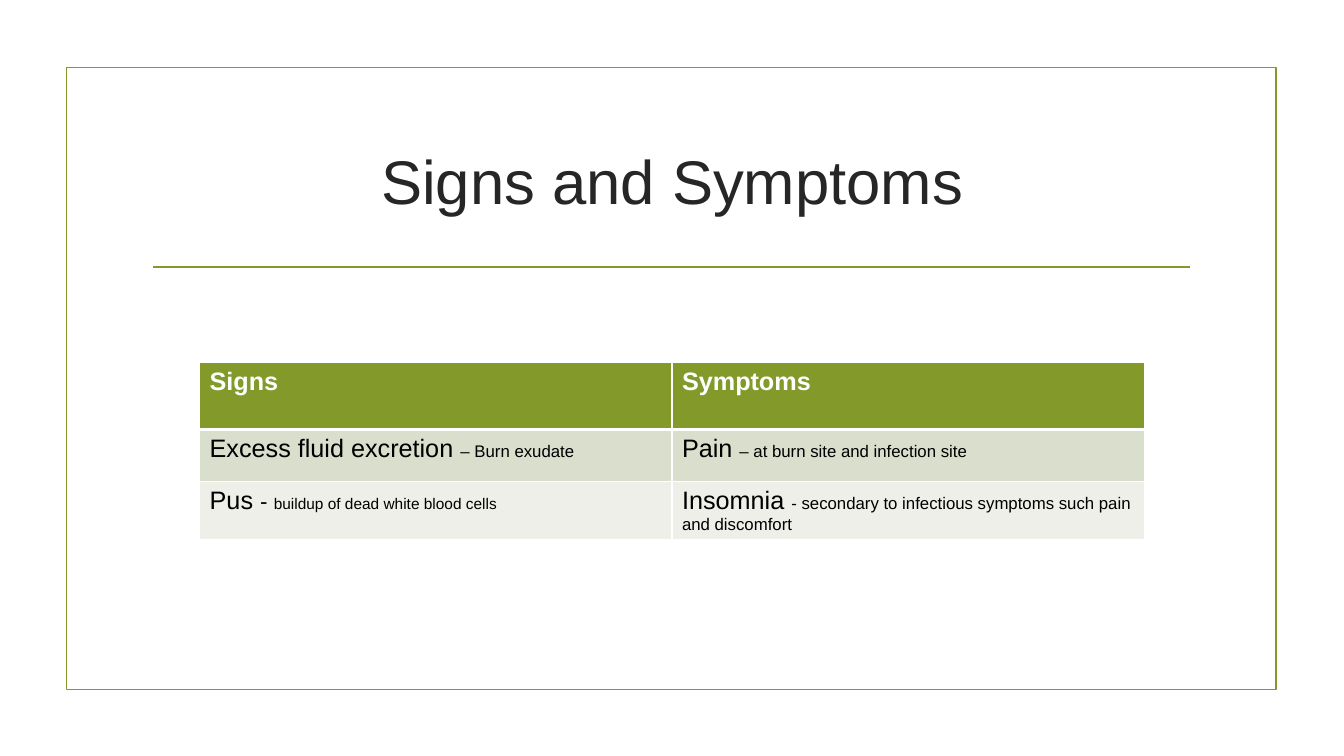
import pptx
import pptx.dml.color
import pptx.enum.shapes
import pptx.enum.text
import pptx.oxml
import pptx.oxml.ns
import pptx.util
from pptx.util import Inches

RGBColor = pptx.dml.color.RGBColor
GREEN = RGBColor(0x83, 0x99, 0x2A)
TITLE_GREY = RGBColor(0x26, 0x26, 0x26)
WHITE = RGBColor(0xFF, 0xFF, 0xFF)
BLACK = RGBColor(0, 0, 0)
ROW_FILLS = [GREEN, RGBColor(0xD9, 0xDE, 0xCD), RGBColor(0xED, 0xEF, 0xE8)]
ROW_HEIGHTS = [0.66, 0.52, 0.57]
FONT = "Arial"

# Each cell is a list of (text, size in points) runs.
ROWS = [
    [[("Signs", 18)], [("Symptoms", 18)]],
    [[("Excess fluid excretion ", 18), ("– Burn exudate", 12)],
     [("Pain ", 18), ("– at burn site and infection site", 12)]],
    [[("Pus ", 18), ("- ", 16), ("buildup of dead white blood cells", 11)],
     [("Insomnia ", 18),
      ("- secondary to infectious symptoms such pain and discomfort", 12)]],
]


def format_font(font, size, color, bold=False):
    font.name = FONT
    font.size = pptx.util.Pt(size)
    font.color.rgb = color
    font.bold = bold


def add_frame(slide, left, top, width, height):
    """Draw the outline and the rule that separates title from content."""
    frame = slide.shapes.add_shape(
        pptx.enum.shapes.MSO_SHAPE.RECTANGLE,
        Inches(left), Inches(top), Inches(width), Inches(height))
    frame.shadow.inherit = False
    frame.fill.background()

    rule_inset, rule_top = 0.86, top + 1.98
    rule = slide.shapes.add_connector(
        pptx.enum.shapes.MSO_CONNECTOR.STRAIGHT,
        Inches(left + rule_inset), Inches(rule_top),
        Inches(left + width - rule_inset), Inches(rule_top))
    rule._element.spPr.append(pptx.oxml.parse_xml(
        f'<a:effectLst {pptx.oxml.ns.nsdecls("a")}/>'))

    for shape in (frame, rule):
        shape.line.color.rgb = GREEN
        shape.line.width = pptx.util.Pt(1.25)


def place_title(slide, text, left, top, width, height):
    title = slide.shapes.title
    title.left, title.top = Inches(left), Inches(top)
    title.width, title.height = Inches(width), Inches(height)
    title.text_frame.text = text
    title.text_frame.vertical_anchor = pptx.enum.text.MSO_ANCHOR.MIDDLE
    paragraph = title.text_frame.paragraphs[0]
    paragraph.alignment = pptx.enum.text.PP_ALIGN.CENTER
    format_font(paragraph.runs[0].font, 44, TITLE_GREY)


def set_borders(cell, bottom_width, top_width):
    """Give a cell white borders, with widths in points; call before filling."""
    properties = cell._tc.get_or_add_tcPr()
    widths = {"lnL": 1, "lnR": 1, "lnT": top_width, "lnB": bottom_width}
    for side, width in widths.items():
        properties.append(pptx.oxml.parse_xml(
            f'<a:{side} {pptx.oxml.ns.nsdecls("a")} w="{pptx.util.Pt(width)}">'
            f'<a:solidFill><a:srgbClr val="{WHITE}"/></a:solidFill></a:{side}>'))


def fill_cell(cell, runs, row_index):
    is_header = row_index == 0
    set_borders(cell, bottom_width=3 if is_header else 1,
                top_width=3 if row_index == 1 else 1)
    cell.fill.solid()
    cell.fill.fore_color.rgb = ROW_FILLS[row_index]
    paragraph = cell.text_frame.paragraphs[0]
    for text, size in runs:
        run = paragraph.add_run()
        run.text = text
        format_font(run.font, size, WHITE if is_header else BLACK, is_header)


def add_findings_table(slide, left, top, width):
    table = slide.shapes.add_table(
        len(ROWS), len(ROWS[0]), Inches(left), Inches(top),
        Inches(width), Inches(sum(ROW_HEIGHTS))).table
    for column in table.columns:
        column.width = Inches(width / len(ROWS[0]))
    for row_index, row in enumerate(ROWS):
        table.rows[row_index].height = Inches(ROW_HEIGHTS[row_index])
        for column_index, runs in enumerate(row):
            fill_cell(table.cell(row_index, column_index), runs, row_index)


def main():
    presentation = pptx.Presentation()
    presentation.slide_width = Inches(13.33)
    presentation.slide_height = Inches(7.5)
    title_only_layout = presentation.slide_layouts[5]
    slide = presentation.slides.add_slide(title_only_layout)
    add_frame(slide, 0.66, 0.67, 12, 6.17)
    place_title(slide, "Signs and Symptoms", 1.42, 1.07, 10.5, 1.43)
    add_findings_table(slide, 1.98, 3.6, 9.37)
    presentation.save("out.pptx")


if __name__ == "__main__":
    main()
